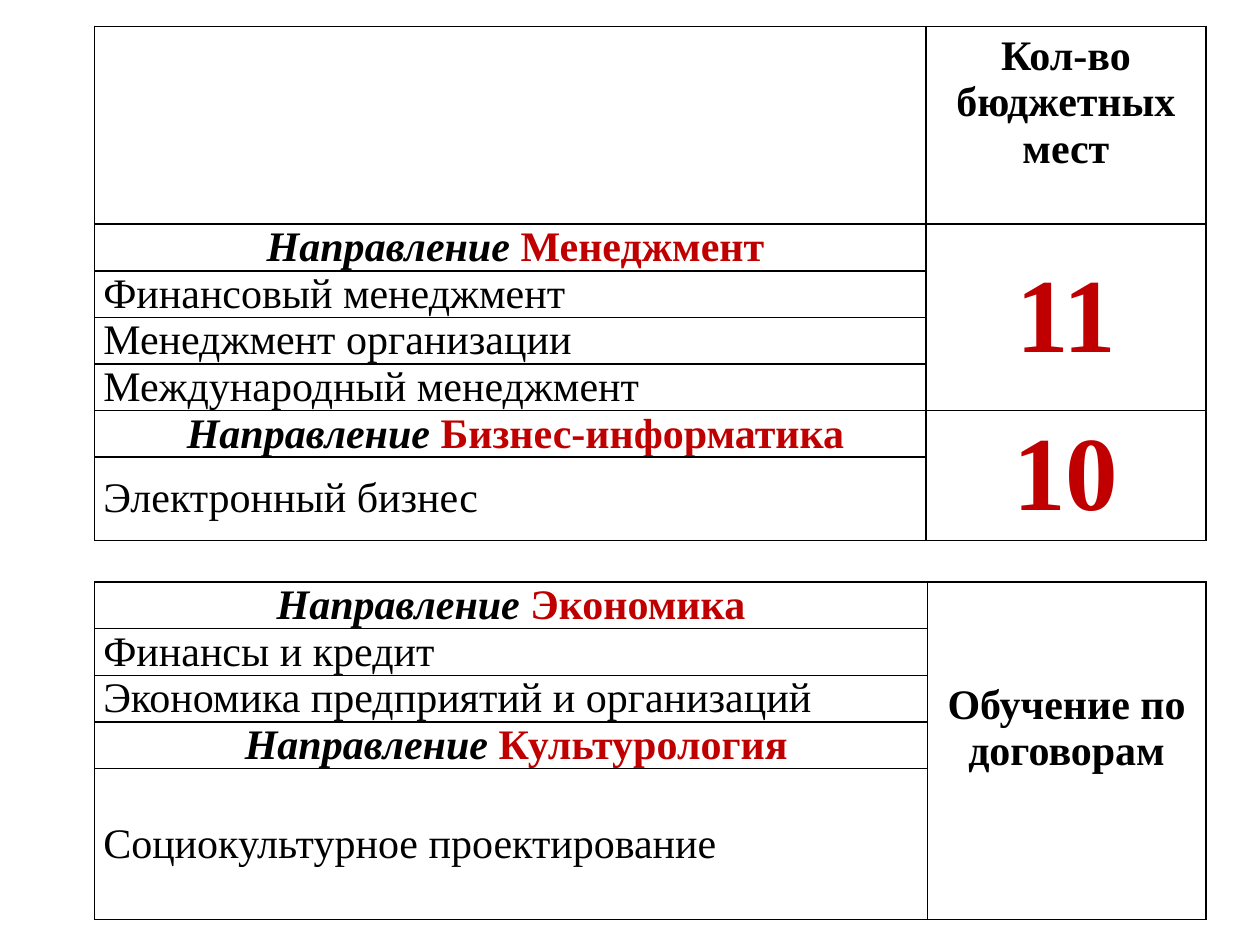
import pptx
import pptx.dml.color
import pptx.enum.text
import pptx.oxml
import pptx.oxml.ns
import pptx.util
from pptx.util import Inches

COLORS = {"black": "000000", "red": "C00000", "paper": "FFFFFF"}
FONT = "Times New Roman"
ALIGN = pptx.enum.text.PP_ALIGN
LINE_H = 0.37


def rgb(name):
    """Return a named colour."""
    return pptx.dml.color.RGBColor.from_string(COLORS[name])


def style_cell(cell):
    """Give a cell a plain fill and thin black borders."""
    cell.fill.solid()
    cell.fill.fore_color.rgb = rgb("paper")
    cell.vertical_anchor = pptx.enum.text.MSO_ANCHOR.MIDDLE
    pr = cell._tc.get_or_add_tcPr()
    for i, side in enumerate(("lnL", "lnR", "lnT", "lnB")):
        pr.insert(i, pptx.oxml.parse_xml(
            f'<a:{side} {pptx.oxml.ns.nsdecls("a")} w="12700"><a:solidFill>'
            f'<a:srgbClr val="{COLORS["black"]}"/></a:solidFill></a:{side}>'))


def write(cell, runs, align, size=24, bold=True):
    """Write (text, colour, italic) runs into a cell."""
    p = cell.text_frame.paragraphs[0]
    p.alignment = align
    p.font.name, p.font.size, p.font.bold = FONT, pptx.util.Pt(size), bold
    for text, color, italic in runs:
        r = p.add_run()
        r.text = text
        r.font.color.rgb = rgb(color)
        r.font.italic = italic


def add_grid(s, x, y, widths, heights):
    """Add a plain bordered table and return it."""
    tbl = s.shapes.add_table(len(heights), len(widths), Inches(x), Inches(y),
                             Inches(sum(widths)), Inches(sum(heights))).table
    tbl.first_row = tbl.horz_banding = False
    for col, w in zip(tbl.columns, widths):
        col.width = Inches(w)
    for row, h in zip(tbl.rows, heights):
        row.height = Inches(h)
    for cell in tbl.iter_cells():
        style_cell(cell)
    return tbl


def write_programme(cell, text, lead=None):
    """Write a programme name, or a field heading when a lead is given."""
    cell.margin_left = cell.margin_right = Inches(0.07)
    cell.margin_top = cell.margin_bottom = 0
    if lead:
        write(cell, [(lead, "black", True), (text, "red", False)], ALIGN.CENTER)
    else:
        write(cell, [(text, "black", False)], ALIGN.JUSTIFY, bold=False)


def write_side(tbl, first, last, text, color="black", size=24, bottom=0.05):
    """Merge rows of the right column and write a centred label."""
    cell = tbl.cell(first, 1)
    if last > first:
        cell.merge(tbl.cell(last, 1))
    cell.margin_bottom = Inches(bottom)
    write(cell, [(text, color, False)], ALIGN.CENTER, size)


def budget_table(s, x, y):
    """Place the table of state-funded places."""
    tbl = add_grid(s, x, y, [6.6, 2.22], [1.57] + [LINE_H] * 5 + [0.66])
    rows = [("Менеджмент", " Направление "), ("Финансовый менеджмент",),
            ("Менеджмент организации",), ("Международный менеджмент",),
            ("Бизнес-информатика", " Направление "), ("Электронный бизнес",)]
    for i, row in enumerate(rows, 1):
        write_programme(tbl.cell(i, 0), *row)
    write_side(tbl, 0, 0, "Кол-во бюджетных мест", bottom=0.41)
    write_side(tbl, 1, 4, "11", "red", 60)
    write_side(tbl, 5, 6, "10", "red", 60)


def contract_table(s, x, y):
    """Place the table of fee-paying programmes."""
    tbl = add_grid(s, x, y, [6.61, 2.21], [LINE_H] * 4 + [1.2])
    rows = [("Экономика", "Направление "), ("Финансы и кредит",),
            ("Экономика предприятий и организаций",),
            ("Культурология", " Направление "), ("Социокультурное проектирование",)]
    for i, row in enumerate(rows):
        write_programme(tbl.cell(i, 0), *row)
    write_side(tbl, 0, 4, "Обучение по договорам", bottom=0.41)


def main():
    """Build and save the slide."""
    prs = pptx.Presentation()
    prs.slide_width, prs.slide_height = Inches(10), Inches(7.5)
    s = prs.slides.add_slide(prs.slide_layouts[6])
    budget_table(s, 0.75, 0.21)
    contract_table(s, 0.75, 4.62)
    prs.save("out.pptx")


if __name__ == "__main__":
    main()
